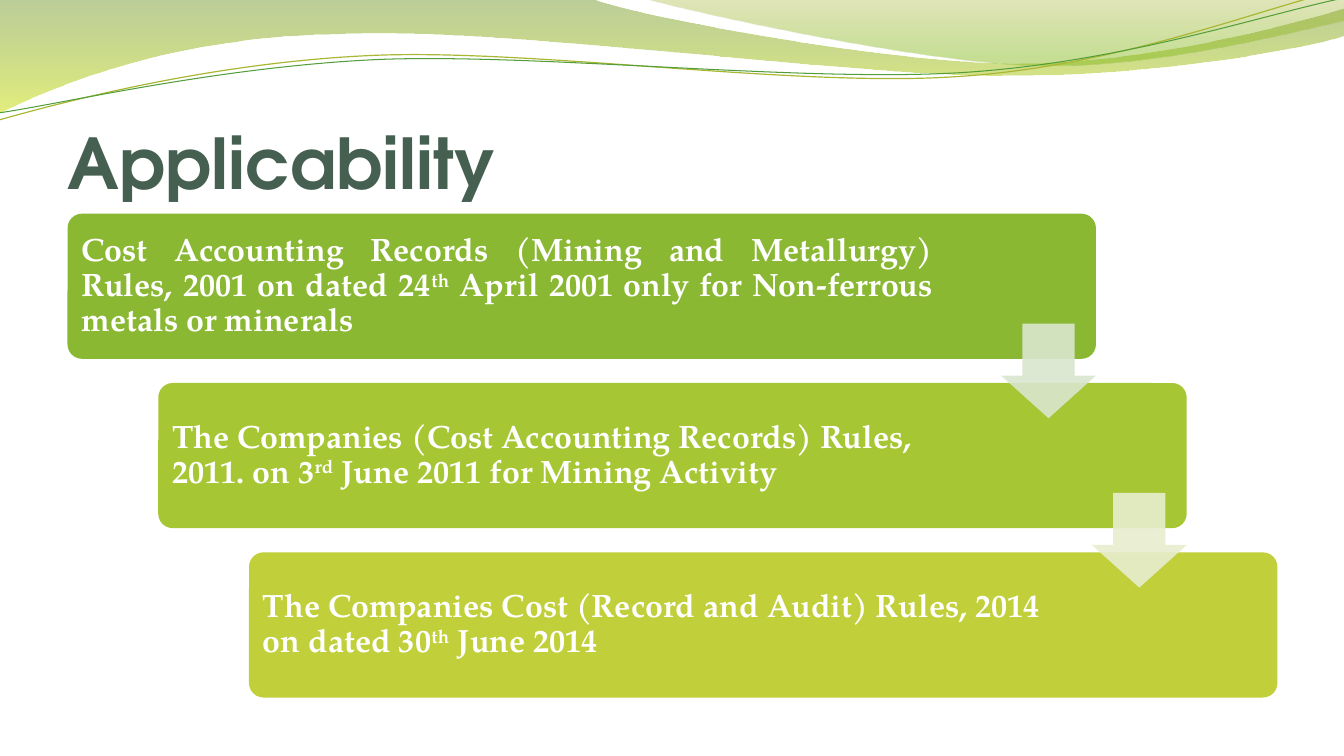
from lxml import etree
from pptx import Presentation
from pptx.dml.color import RGBColor
from pptx.enum.shapes import MSO_SHAPE
from pptx.enum.text import MSO_ANCHOR, PP_ALIGN
from pptx.oxml.ns import qn
from pptx.util import Inches, Pt

ROUNDED = MSO_SHAPE.ROUNDED_RECTANGLE
DOWN_ARROW = MSO_SHAPE.DOWN_ARROW
MIDDLE, BOTTOM = MSO_ANCHOR.MIDDLE, MSO_ANCHOR.BOTTOM
LEFT, JUSTIFY = PP_ALIGN.LEFT, PP_ALIGN.JUSTIFY

WIDTH, HEIGHT = 13.33, 7.5
MARGIN = 0.67
HEAD_FONT, BODY_FONT = "TeX Gyre Adventor", "TeX Gyre Pagella"
WHITE = RGBColor(0xFF, 0xFF, 0xFF)
SLATE = RGBColor(0x45, 0x5F, 0x51)
MOSS = RGBColor(0x69, 0x92, 0x1C)
LIME = RGBColor(0xCC, 0xE1, 0x0F)
OLIVE = RGBColor(0x9B, 0xAA, 0x1A)
LEAF = RGBColor(0x81, 0xBA, 0x16)
GOLD_LINE = RGBColor(0xA9, 0xB7, 0x33)
GREEN_LINE = RGBColor(0x54, 0x9E, 0x39)
CARD_FILLS = [RGBColor(0x8A, 0xB8, 0x33), RGBColor(0xA6, 0xC6, 0x34), RGBColor(0xC0, 0xCF, 0x3A)]
ARROW_FILLS = [RGBColor(0xDA, 0xE6, 0xCE), RGBColor(0xE8, 0xED, 0xCE)]

CARD_WIDTH, CARD_HEIGHT = 10.2, 1.44
STEP_X, STEP_Y = 0.9, 1.68
ARROW_SIZE = 0.94

BANDS = [
    ((0, 0),
     [[(5.87, -0.01)],
      [(6.34, 0.17), (8.84, 0.63), (10.11, 0.63)],
      [(11.37, 0.63), (12.77, 0.26), (13.33, 0.09)],
      [(13.34, 0.36)],
      [(13.11, 0.44), (11.59, 0.76), (9.94, 0.75)],
      [(8.29, 0.75), (5.09, 0.28), (3.43, 0.34)],
      [(1.72, 0.36), (0.61, 0.83), (-0.02, 1.13)]],
     [(0, MOSS, 45), (1, LIME, 55)]),
    ((6.38, -0.01),
     [[(6.79, 0.11), (9.09, 0.62), (10.25, 0.65)],
      [(11.4, 0.69), (12.82, 0.32), (13.33, 0.21)],
      [(13.33, 0)]],
     [(0, OLIVE, 30), (0.8, LEAF, 45)]),
]
STRANDS = [
    ((-0.01, 1.19),
     [[(0.63, 1.01), (2.1, 0.62), (3.69, 0.55)],
      [(5.27, 0.48), (7.89, 0.87), (9.49, 0.76)],
      [(11.1, 0.66), (12.51, 0.08), (13.3, -0.1)]],
     GOLD_LINE, 0.85),
    ((-0.01, 1.12),
     [[(0.62, 1.03), (2.18, 0.66), (3.77, 0.59)],
      [(5.37, 0.53), (7.96, 0.82), (9.55, 0.72)],
      [(11.14, 0.62), (12.55, 0.14), (13.33, -0.02)]],
     GREEN_LINE, 0.75),
]
RULES = [
    ("Cost Accounting Records (Mining and Metallurgy) Rules, 2001 on dated 24", "th",
     " April 2001 only for Non-ferrous metals or minerals", JUSTIFY, 8.65),
    ("The Companies (Cost Accounting Records) Rules, 2011. on 3", "rd",
     " June 2011 for Mining Activity", LEFT, 8.28),
    ("The Companies Cost (Record and Audit) Rules, 2014 on dated 30", "th",
     " June 2014", LEFT, 8.28),
]


def set_opacity(shape, percents):
    colors = shape._element.spPr.iter(qn("a:srgbClr"))
    for color, percent in zip(list(colors), percents):
        etree.SubElement(color, qn("a:alpha")).set("val", str(percent * 1000))


def bend(shape, segments):
    lines = iter(list(shape._element.spPr.iter(qn("a:lnTo"))))
    for segment in segments:
        first, *others = [next(lines) for _ in segment]
        if others:
            curve = etree.Element(qn("a:cubicBezTo"))
            first.addprevious(curve)
            for line in (first, *others):
                curve.append(line[0])
                line.getparent().remove(line)


def add_outline(page, start, segments, close):
    builder = page.shapes.build_freeform(*map(Inches, start))
    points = [(Inches(x), Inches(y)) for segment in segments for x, y in segment]
    builder.add_line_segments(points, close=close)
    shape = builder.convert_to_shape()
    bend(shape, segments)
    shape.shadow.inherit = False
    return shape


def add_waves(page):
    for start, segments, stops in BANDS:
        band = add_outline(page, start, segments, True)
        band.line.fill.background()
        band.fill.gradient()
        band.fill.gradient_angle = 270
        for stop, (position, color, _) in zip(band.fill.gradient_stops, stops):
            stop.position = position
            stop.color.rgb = color
        set_opacity(band, [opacity for _, _, opacity in stops])
    for start, segments, color, weight in STRANDS:
        strand = add_outline(page, start, segments, False)
        strand.fill.background()
        strand.line.color.rgb = color
        strand.line.width = Pt(weight)


def add_text(page, box, spans, font, size, color, anchor, insets):
    frame = page.shapes.add_textbox(*map(Inches, box)).text_frame
    frame.word_wrap = True
    frame.vertical_anchor = anchor
    (frame.margin_left, frame.margin_top,
     frame.margin_right, frame.margin_bottom) = map(Inches, insets)
    para = frame.paragraphs[0]
    for text, raised in spans:
        span = para.add_run()
        span.text = text
        span.font.name = font
        span.font.size = Pt(size)
        span.font.bold = True
        span.font.color.rgb = color
        if raised:
            span._r.get_or_add_rPr().set("baseline", "30000")
    return para


def add_block(page, kind, box, adjustments, color):
    shape = page.shapes.add_shape(kind, *map(Inches, box))
    for index, value in enumerate(adjustments):
        shape.adjustments[index] = value
    shape.shadow.inherit = False
    shape.fill.solid()
    shape.fill.fore_color.rgb = color
    shape.line.fill.background()
    return shape


def add_title(page, box):
    add_text(page, box, [("Applicability", False)], HEAD_FONT, 50, SLATE, BOTTOM, (0, 0.05, 0, 0))


def add_staircase(page, left, top):
    corners = [(left + i * STEP_X, top + i * STEP_Y) for i in range(len(RULES))]
    for (x, y), fill, (before, ordinal, after, align, width) in zip(corners, CARD_FILLS, RULES):
        add_block(page, ROUNDED, (x, y, CARD_WIDTH, CARD_HEIGHT), [0.1], fill)
        para = add_text(page, (x + 0.04, y + 0.04, width, CARD_HEIGHT - 0.08),
                        [(before, False), (ordinal, True), (after, False)],
                        BODY_FONT, 23, WHITE, MIDDLE, (0.1,) * 4)
        para.alignment = align
        para.line_spacing = 0.9
        para.space_after = Pt(8)
    for (x, y), fill in zip(corners, ARROW_FILLS):
        box = (x + CARD_WIDTH - ARROW_SIZE, y + 1.09, ARROW_SIZE, ARROW_SIZE)
        arrow = add_block(page, DOWN_ARROW, box, [0.55, 0.45], fill)
        set_opacity(arrow, [90])


def main():
    deck = Presentation()
    deck.slide_width, deck.slide_height = Inches(WIDTH), Inches(HEIGHT)
    page = deck.slides.add_slide(deck.slide_layouts[6])
    add_waves(page)
    add_title(page, (MARGIN, 0.77, 12, 1.25))
    add_staircase(page, MARGIN, 2.12)
    deck.save("out.pptx")


if __name__ == "__main__":
    main()
